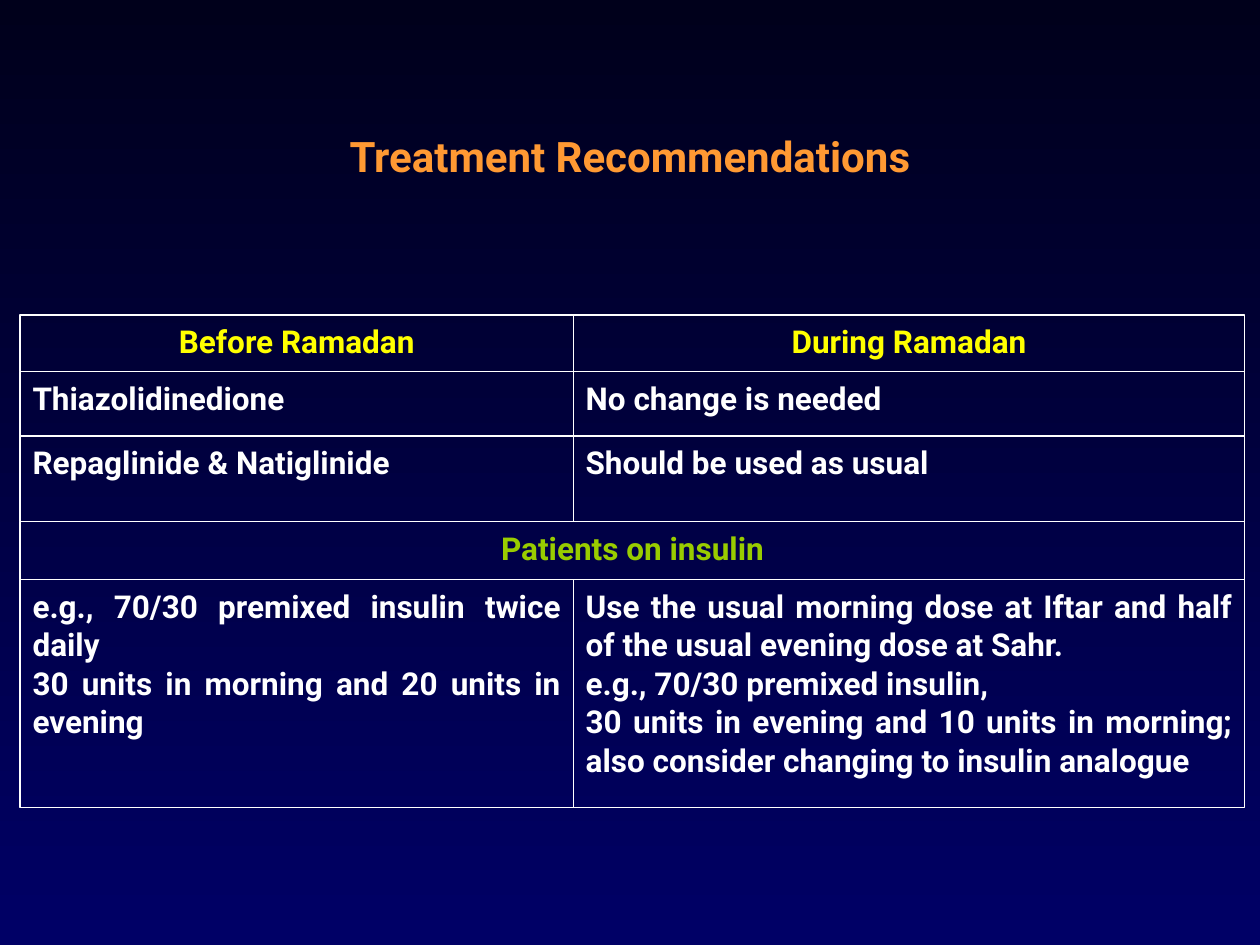
from pptx import Presentation
from pptx.dml.color import RGBColor
from pptx.enum.shapes import MSO_SHAPE
from pptx.enum.text import MSO_ANCHOR, PP_ALIGN
from pptx.util import Inches, Pt

MID, JUST = PP_ALIGN.CENTER, PP_ALIGN.JUSTIFY
TOP = MSO_ANCHOR.TOP
RECT = MSO_SHAPE.RECTANGLE
FONT = "Roboto"
HUES = {"dark": "00001B", "blue": "000066", "white": "FFFFFF",
        "gold": "FFFF00", "green": "99CC00", "orange": "FF9933"}


def write(frame, lines, size, hue, align, pitch=1.0):
    frame.word_wrap = True
    frame.vertical_anchor = TOP
    for i, line in enumerate(lines):
        para = frame.paragraphs[0] if i == 0 else frame.add_paragraph()
        para.alignment = align
        para.line_spacing = pitch
        run = para.add_run()
        run.text = line
        run.font.name = FONT
        run.font.size = Pt(size)
        run.font.bold = True
        run.font.color.rgb = RGBColor.from_string(HUES[hue])


deck = Presentation()
deck.slide_width, deck.slide_height = Inches(10), Inches(7.5)
slide = deck.slides.add_slide(deck.slide_layouts[6])

# Background, dark at the top
back = slide.background.fill
back.gradient()
back.gradient_angle = 270
for stop, hue in zip(back.gradient_stops, ("dark", "blue")):
    stop.color.rgb = RGBColor.from_string(HUES[hue])

# Grid of framed boxes: height, hue, alignment and cells of each row
rows = [
    (0.45, "gold", MID, [["Before Ramadan"], ["During Ramadan"]]),
    (0.51, "white", JUST, [["Thiazolidinedione"], ["No change is needed"]]),
    (0.68, "white", JUST, [["Repaglinide & Natiglinide"],
                           ["Should be used as usual"]]),
    (0.46, "green", MID, [["Patients on insulin"]]),
    (1.81, "white", JUST, [
        ["e.g., 70/30 premixed insulin twice daily",
         "30 units in morning and 20 units in evening"],
        ["Use the usual morning dose at Iftar and half of the usual evening dose at Sahr.",
         "e.g., 70/30 premixed insulin,",
         "30 units in evening and 10 units in morning; "
         "also consider changing to insulin analogue"]]),
]
wide = [4.39, 5.33]
group = slide.shapes.add_group_shape()
y = 2.5
for high, hue, align, cells in rows:
    x = 0.16
    spans = wide if len(cells) == 2 else [sum(wide)]
    for span, lines in zip(spans, cells):
        box = group.shapes.add_shape(RECT, Inches(x), Inches(y),
                                     Inches(span), Inches(high))
        box.shadow.inherit = False
        box.fill.background()
        box.line.color.rgb = RGBColor.from_string(HUES["white"])
        box.line.width = Pt(0.75)
        write(box.text_frame, lines, 18, hue, align, 1.02)
        x += span
    y += high

# Title
title = slide.shapes.add_textbox(0, Inches(0.99), deck.slide_width, Inches(0.56))
write(title.text_frame, ["Treatment Recommendations"], 24, "orange", MID)

deck.save("out.pptx")
